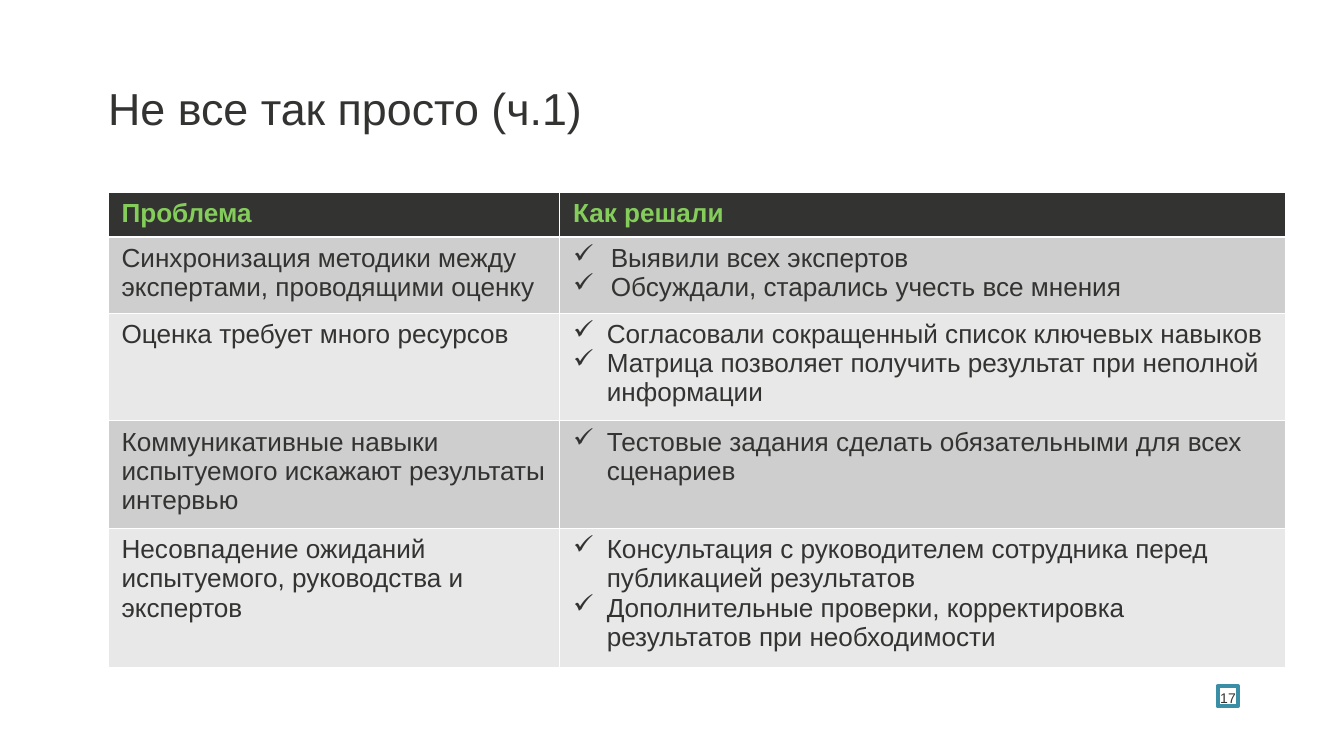
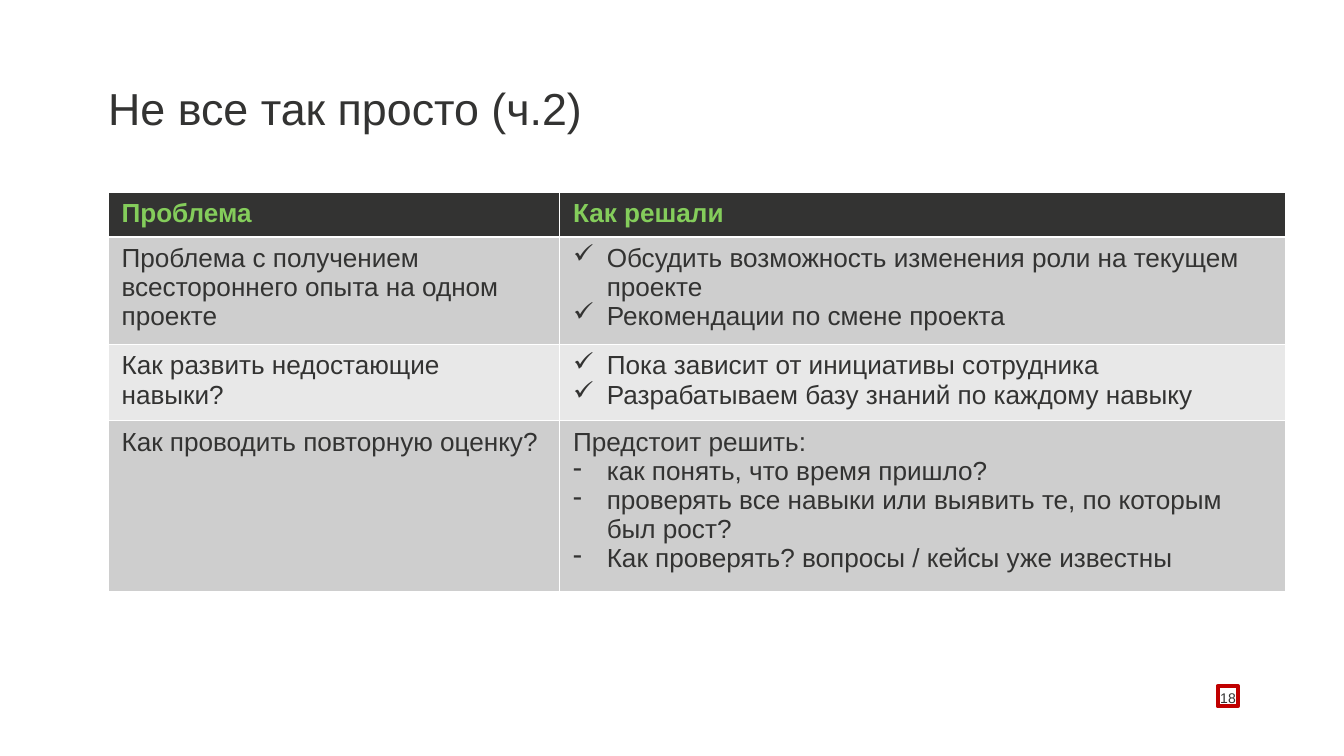
from dataclasses import dataclass

from lxml.etree import SubElement
from pptx import Presentation
from pptx.dml.color import RGBColor
from pptx.enum.shapes import MSO_SHAPE
from pptx.enum.text import MSO_ANCHOR, PP_ALIGN
from pptx.oxml.ns import qn
from pptx.util import Inches, Pt

WHITE = RGBColor(0xFF, 0xFF, 0xFF)
INK = RGBColor(0x33, 0x33, 0x32)
GREEN = RGBColor(0x84, 0xCD, 0x5B)
BAND_DARK = RGBColor(0xCE, 0xCE, 0xCE)
BAND_LIGHT = RGBColor(0xE8, 0xE8, 0xE8)
TEAL = RGBColor(0x3A, 0x8F, 0xA7)
RED = RGBColor(0xC0, 0x00, 0x00)

FONT = "Arial"
LEFT = 1.61
COLUMNS = (6.72, 10.8)
HEADINGS = ("Проблема", "Как решали")
LINE_HEIGHT = 0.43
CELL_MARGIN_X, CELL_MARGIN_Y = 0.2, 0.1


@dataclass
class Issue:
    """A table row; lines is the line count of its tallest cell."""
    problem: str
    answers: tuple
    lines: int
    intro: str = ""
    mark: str = "✓"
    indent: float = 0.5


class Deck:
    def __init__(self):
        self.presentation = Presentation()
        self.presentation.slide_width = Inches(20)
        self.presentation.slide_height = Inches(11.25)
        self.page = None

    def add_page(self):
        self.page = self.presentation.slides.add_slide(self.presentation.slide_layouts[6])

    def style(self, paragraph, size, color=INK, bold=False):
        font = paragraph.font
        font.name, font.size, font.bold = FONT, Pt(size), bold
        font.color.rgb = color

    def text(self, content, left, top, width, height, size):
        box = self.page.shapes.add_textbox(
            Inches(left), Inches(top), Inches(width), Inches(height))
        frame = box.text_frame
        frame.word_wrap = True
        frame.margin_left = frame.margin_right = frame.margin_top = frame.margin_bottom = 0
        paragraph = frame.paragraphs[0]
        paragraph.text = content
        self.style(paragraph, size)
        return frame

    def title(self, content):
        frame = self.text(content, LEFT, 1.25, 12.96, 0.93, 48)
        frame.paragraphs[0].line_spacing = 0.96

    def page_number(self, number, color):
        frame = self.text(str(number), 16.95, 9.88, 1.44, 0.63, 15)
        frame.vertical_anchor = MSO_ANCHOR.BOTTOM
        frame.paragraphs[0].alignment = PP_ALIGN.RIGHT
        square = self.page.shapes.add_shape(
            MSO_SHAPE.RECTANGLE, Inches(18.12), Inches(10.21), Inches(0.3), Inches(0.3))
        square.shadow.inherit = False
        square.fill.background()
        square.line.color.rgb = color
        square.line.width = Pt(4.5)

    def bullet(self, paragraph, mark, indent):
        properties = paragraph._p.get_or_add_pPr()
        properties.set("marL", str(Inches(indent)))
        properties.set("indent", str(-Inches(indent)))
        SubElement(properties, qn("a:buChar"), char=mark)

    def borders(self, cell, top=1, bottom=1):
        properties = cell._tc.get_or_add_tcPr()
        for side, width in (("L", 1), ("R", 1), ("T", top), ("B", bottom)):
            line = SubElement(properties, qn(f"a:ln{side}"), w=str(Pt(width)))
            fill = SubElement(line, qn("a:solidFill"))
            SubElement(fill, qn("a:srgbClr"), val=str(WHITE))

    def cell(self, cell, fill, top=1, bottom=1):
        cell.margin_left = cell.margin_right = Inches(CELL_MARGIN_X)
        cell.margin_top = cell.margin_bottom = Inches(CELL_MARGIN_Y)
        self.borders(cell, top, bottom)
        cell.fill.solid()
        cell.fill.fore_color.rgb = fill

    def fill_answers(self, frame, issue):
        intro = [issue.intro] if issue.intro else []
        for index, content in enumerate([*intro, *issue.answers]):
            paragraph = frame.paragraphs[0] if index == 0 else frame.add_paragraph()
            paragraph.text = content
            if index >= len(intro):
                self.bullet(paragraph, issue.mark, issue.indent)
            self.style(paragraph, 28)

    def issue_table(self, issues):
        heights = [2 * CELL_MARGIN_Y + LINE_HEIGHT * lines
                   for lines in (1, *(issue.lines for issue in issues))]
        table = self.page.shapes.add_table(
            len(heights), len(COLUMNS), Inches(LEFT), Inches(2.86),
            Inches(sum(COLUMNS)), Inches(sum(heights))).table
        table.horz_banding = False
        for column, width in zip(table.columns, COLUMNS):
            column.width = Inches(width)
        for row, height in zip(table.rows, heights):
            row.height = Inches(height)

        for cell, heading in zip(table.rows[0].cells, HEADINGS):
            self.cell(cell, INK, bottom=3)
            paragraph = cell.text_frame.paragraphs[0]
            paragraph.text = heading
            self.style(paragraph, 28, GREEN, bold=True)

        for number, issue in enumerate(issues, start=1):
            problem, answers = table.rows[number].cells
            for cell in (problem, answers):
                self.cell(cell, BAND_DARK if number % 2 else BAND_LIGHT,
                          top=3 if number == 1 else 1)
            paragraph = problem.text_frame.paragraphs[0]
            paragraph.text = issue.problem
            self.style(paragraph, 28)
            self.fill_answers(answers.text_frame, issue)


PAGES = (
    ("Не все так просто (ч.1)", 17, TEAL, (
        Issue("Синхронизация методики между экспертами, проводящими оценку",
              ("Выявили всех экспертов",
               "Обсуждали, старались учесть все мнения"), 2, indent=0.56),
        Issue("Оценка требует много ресурсов",
              ("Согласовали сокращенный список ключевых навыков",
               "Матрица позволяет получить результат при неполной информации"), 3),
        Issue("Коммуникативные навыки испытуемого искажают результаты интервью",
              ("Тестовые задания сделать обязательными для всех сценариев",), 3),
        Issue("Несовпадение ожиданий испытуемого, руководства и экспертов",
              ("Консультация с руководителем сотрудника перед публикацией результатов",
               "Дополнительные проверки, корректировка результатов при необходимости"), 4),
    )),
    ("Не все так просто (ч.2)", 18, RED, (
        Issue("Проблема с получением всестороннего опыта на одном проекте",
              ("Обсудить возможность изменения роли на текущем проекте",
               "Рекомендации по смене проекта"), 3),
        Issue("Как развить недостающие навыки?",
              ("Пока зависит от инициативы сотрудника",
               "Разрабатываем базу знаний по каждому навыку"), 2),
        Issue("Как проводить повторную оценку?",
              ("как понять, что время пришло?",
               "проверять все навыки или выявить те, по которым был рост?",
               "Как проверять? вопросы / кейсы уже известны"), 5,
              intro="Предстоит решить:", mark="-"),
    )),
)


def main():
    deck = Deck()
    for title, number, color, issues in PAGES:
        deck.add_page()
        deck.title(title)
        deck.issue_table(issues)
        deck.page_number(number, color)
    deck.presentation.save("out.pptx")


if __name__ == "__main__":
    main()
